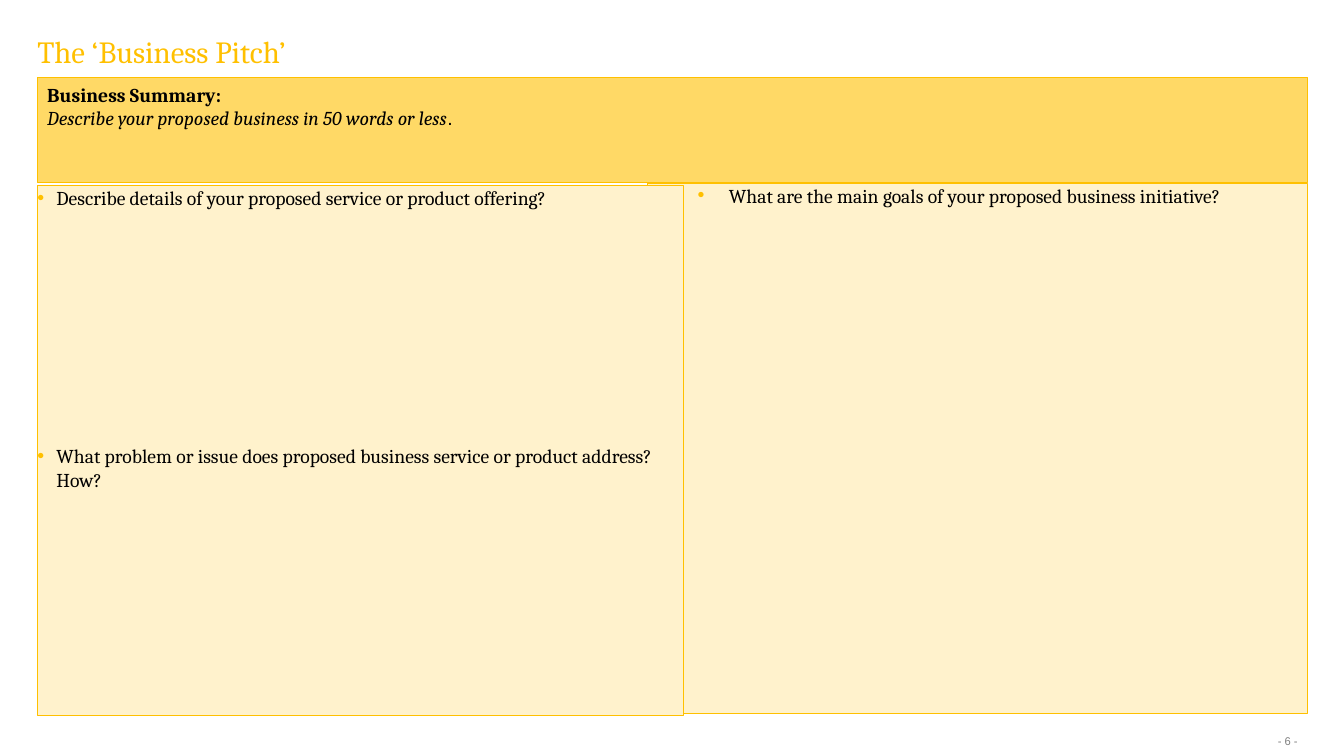
from dataclasses import dataclass
from typing import Optional

from lxml.etree import SubElement
from pptx import Presentation
from pptx.dml.color import RGBColor
from pptx.enum.shapes import MSO_SHAPE as SHAPE
from pptx.enum.text import MSO_ANCHOR as ANCHOR, PP_ALIGN as ALIGN
from pptx.oxml.ns import qn
from pptx.util import Inches, Pt

GOLD = RGBColor(0xFF, 0xC0, 0x00)
AMBER = RGBColor(0xFF, 0xD9, 0x66)
CREAM = RGBColor(0xFF, 0xF2, 0xCC)
BLACK = RGBColor(0x00, 0x00, 0x00)
GRAY = RGBColor(0x7F, 0x7F, 0x7F)

LEFT, WIDTH = 0.37, 12.6
ANSWER_GAP = 168  # points left free for writing under a question


@dataclass
class Box:
    left: float
    top: float
    width: float
    height: float
    fill: Optional[RGBColor] = None
    inset_x: float = 0
    inset_y: float = 0
    anchor: ANCHOR = ANCHOR.TOP


@dataclass
class Panel:
    box: Box
    margin: float
    hang: float
    questions: list[str]


def add_box(slide, box: Box):
    """Draw a box, outlined in gold when filled, and return its text frame."""
    area = [Inches(v) for v in (box.left, box.top, box.width, box.height)]
    if box.fill is None:
        sp = slide.shapes.add_textbox(*area)
    else:
        sp = slide.shapes.add_shape(SHAPE.RECTANGLE, *area)
        sp.shadow.inherit = False
        sp.fill.solid()
        sp.fill.fore_color.rgb = box.fill
        sp.line.color.rgb = GOLD
        sp.line.width = Pt(0.75)
    tf = sp.text_frame
    tf.word_wrap = True
    tf.vertical_anchor = box.anchor
    tf.margin_left = tf.margin_right = Inches(box.inset_x)
    tf.margin_top = tf.margin_bottom = Inches(box.inset_y)
    return tf


def add_text(p, text: str, *, size: float = 14, font: str = "Cambria",
             color: RGBColor = BLACK, bold: bool = False,
             italic: bool = False, align: ALIGN = ALIGN.LEFT) -> None:
    p.alignment = align
    r = p.add_run()
    r.text = text
    r.font.size, r.font.name = Pt(size), font
    r.font.bold, r.font.italic = bold, italic
    r.font.color.rgb = color


def set_bullet(p, margin: float, hang: float) -> None:
    pPr = p._p.get_or_add_pPr()
    pPr.set("marL", str(Inches(margin)))
    pPr.set("indent", str(-Inches(hang)))
    color = SubElement(pPr, qn("a:buClr"))
    SubElement(color, qn("a:srgbClr")).set("val", str(GOLD))
    SubElement(pPr, qn("a:buFont")).set("typeface", "Arial")
    SubElement(pPr, qn("a:buChar")).set("char", "•")


def add_panel(slide, panel: Panel) -> None:
    tf = add_box(slide, panel.box)
    for i, question in enumerate(panel.questions):
        p = tf.add_paragraph() if i else tf.paragraphs[0]
        if i:
            p.space_before = Pt(ANSWER_GAP)
        add_text(p, question)
        set_bullet(p, panel.margin, panel.hang)


PANELS = [
    Panel(Box(6.42, 1.82, 6.55, 5.26, CREAM), 0.81, 0.31,
          ["What are the main goals of your proposed business initiative?"]),
    Panel(Box(LEFT, 1.84, 6.41, 5.26, CREAM), 0.19, 0.19,
          ["Describe details of your proposed service or product offering?",
           "What problem or issue does proposed business service or product "
           "address? How?"]),
]


def main() -> None:
    prs = Presentation()
    prs.slide_width, prs.slide_height = Inches(13.33), Inches(7.5)
    slide = prs.slides.add_slide(prs.slide_layouts[6])

    # Title
    p = add_box(slide, Box(LEFT, 0.37, WIDTH, 0.34)).paragraphs[0]
    p.line_spacing = 0.9
    add_text(p, "The ‘Business Pitch’", size=22, color=GOLD)

    # Question panels
    for panel in PANELS:
        add_panel(slide, panel)

    # Page number
    tf = add_box(slide, Box(12.26, 7.28, 0.71, 0.15, None, 0.1, 0.05,
                            ANCHOR.MIDDLE))
    add_text(tf.paragraphs[0], "- 6 -", size=8, font="Arial", color=GRAY,
             align=ALIGN.RIGHT)

    # Business summary
    tf = add_box(slide, Box(LEFT, 0.77, WIDTH, 1.04, AMBER, 0.1, 0.05))
    add_text(tf.paragraphs[0], "Business Summary:", bold=True)
    p = tf.add_paragraph()
    add_text(p, "Describe your proposed business in 50 words or less",
             italic=True)
    add_text(p, ".", font="Arial")

    prs.save("out.pptx")


if __name__ == "__main__":
    main()
